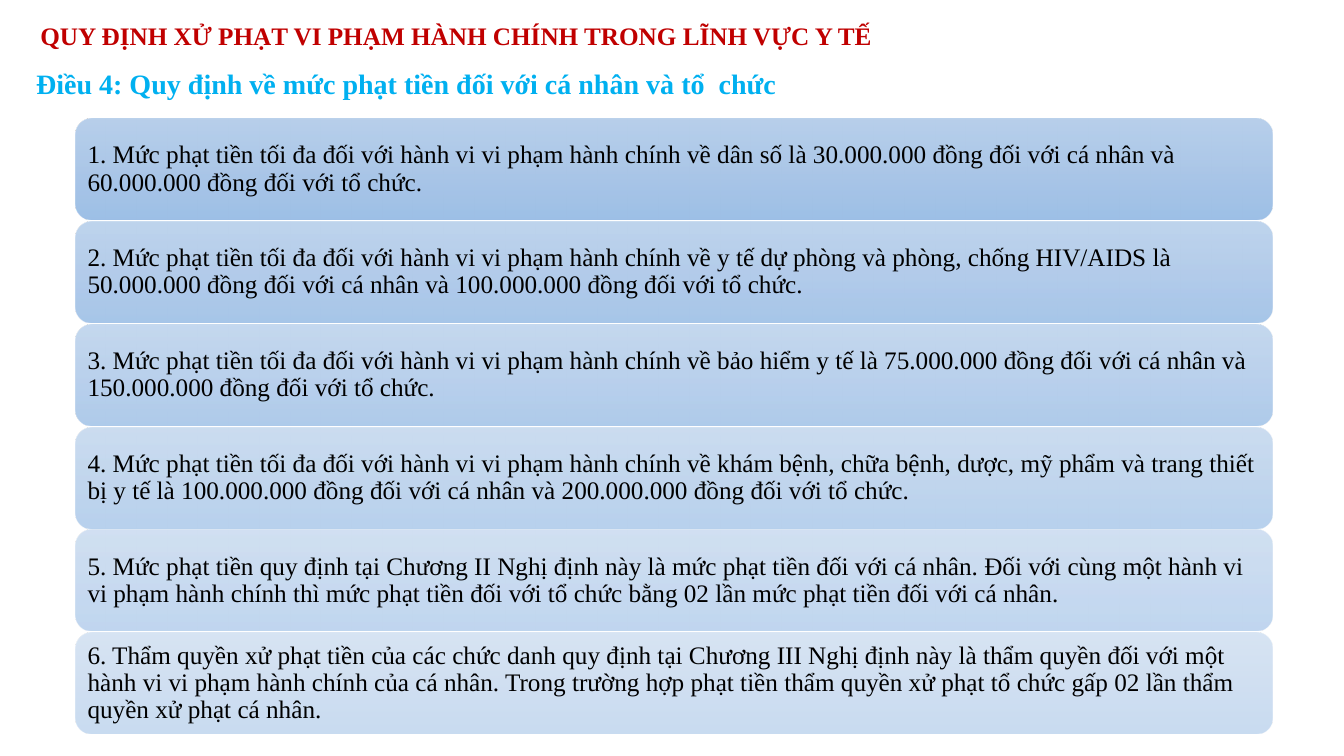
from dataclasses import dataclass

from lxml.etree import SubElement
from pptx import Presentation
from pptx.dml.color import RGBColor
from pptx.enum.shapes import MSO_SHAPE as Preset
from pptx.enum.text import MSO_ANCHOR as Anchor, MSO_AUTO_SIZE as AutoSize, PP_ALIGN as Align
from pptx.oxml.ns import qn
from pptx.util import Inches, Pt


@dataclass(frozen=True)
class Theme:
    font: str = "Times New Roman"
    heading_color: str = "C00000"
    article_color: str = "00B0F0"
    clause_color: str = "000000"
    gradient: tuple = ((0, "B1CBE9"), (50, "A3C1E5"), (100, "93B9E4"))
    heading_size: int = 18
    article_size: int = 20
    clause_size: int = 18


THEME = Theme()

HEADING = "QUY ĐỊNH XỬ PHẠT VI PHẠM HÀNH CHÍNH TRONG LĨNH VỰC Y TẾ"
ARTICLE = "Điều 4: Quy định về mức phạt tiền đối với cá nhân và tổ  chức"
CLAUSES = (
    "1. Mức phạt tiền tối đa đối với hành vi vi phạm hành chính về dân số là "
    "30.000.000 đồng đối với cá nhân và 60.000.000 đồng đối với tổ chức.",
    "2. Mức phạt tiền tối đa đối với hành vi vi phạm hành chính về y tế dự phòng và phòng, "
    "chống HIV/AIDS là 50.000.000 đồng đối với cá nhân và 100.000.000 đồng đối với tổ chức.",
    "3. Mức phạt tiền tối đa đối với hành vi vi phạm hành chính về bảo hiểm y tế là "
    "75.000.000 đồng đối với cá nhân và 150.000.000 đồng đối với tổ chức.",
    "4. Mức phạt tiền tối đa đối với hành vi vi phạm hành chính về khám bệnh, chữa bệnh, dược, "
    "mỹ phẩm và trang thiết bị y tế là 100.000.000 đồng đối với cá nhân và 200.000.000 đồng "
    "đối với tổ chức.",
    "5. Mức phạt tiền quy định tại Chương II Nghị định này là mức phạt tiền đối với cá nhân. "
    "Đối với cùng một hành vi vi phạm hành chính thì mức phạt tiền đối với tổ chức bằng 02 lần "
    "mức phạt tiền đối với cá nhân.",
    "6. Thẩm quyền xử phạt tiền của các chức danh quy định tại Chương III Nghị định này là "
    "thẩm quyền đối với một hành vi vi phạm hành chính của cá nhân. Trong trường hợp phạt tiền "
    "thẩm quyền xử phạt tổ chức gấp 02 lần thẩm quyền xử phạt cá nhân.",
)

# Clause stack, in inches; opacity in percent
CLAUSE_LEFT, CLAUSE_TOP = 0.75, 1.18
CLAUSE_WIDTH, CLAUSE_HEIGHT = 11.87, 1
CLAUSE_PITCH = 1.02
CLAUSE_INSET = 0.07
FIRST_OPACITY, OPACITY_STEP = 90, 8


def apply_format(target, values):
    for name, value in values.items():
        setattr(target, name, value)


def write_text(holder, text, size, color, bold=False, frame_format=None, line_spacing=1.0):
    frame = holder.text_frame
    frame.text = text
    apply_format(frame, {"word_wrap": True, **(frame_format or {})})
    paragraph = frame.paragraphs[0]
    apply_format(paragraph, {"alignment": Align.LEFT, "line_spacing": line_spacing})
    font = paragraph.runs[0].font
    apply_format(font, {"name": THEME.font, "size": Pt(size), "bold": bold})
    font.color.rgb = RGBColor.from_string(color)


def fill_gradient(shape, opacity):
    """Top-to-bottom gradient in the theme colours, at one opacity."""
    shape.fill.gradient()
    shape.fill.gradient_angle = 270
    stops = shape._element.spPr.find(qn("a:gradFill")).find(qn("a:gsLst"))
    stops.clear()
    for position, color in THEME.gradient:
        stop = SubElement(stops, qn("a:gs"), pos=str(position * 1000))
        shade = SubElement(stop, qn("a:srgbClr"), val=color)
        SubElement(shade, qn("a:alpha"), val=str(opacity * 1000))


def add_heading(slide):
    heading = slide.shapes.title
    apply_format(heading, {"left": Inches(0.3), "top": Inches(0.15),
                           "width": Inches(8.86), "height": Inches(0.4)})
    write_text(heading, HEADING, THEME.heading_size, THEME.heading_color, bold=True,
               frame_format={"vertical_anchor": Anchor.TOP,
                             "auto_size": AutoSize.SHAPE_TO_FIT_TEXT})


def add_article(slide):
    article = slide.shapes.add_textbox(Inches(0.26), Inches(0.61), Inches(10.74), Inches(0.44))
    write_text(article, ARTICLE, THEME.article_size, THEME.article_color, bold=True,
               frame_format={"auto_size": AutoSize.SHAPE_TO_FIT_TEXT})


def add_clause(slide, index, text):
    clause = slide.shapes.add_shape(
        Preset.ROUNDED_RECTANGLE, Inches(CLAUSE_LEFT), Inches(CLAUSE_TOP + index * CLAUSE_PITCH),
        Inches(CLAUSE_WIDTH), Inches(CLAUSE_HEIGHT))
    clause.shadow.inherit = False
    clause.line.fill.background()
    fill_gradient(clause, FIRST_OPACITY - index * OPACITY_STEP)
    insets = {f"margin_{side}": Inches(CLAUSE_INSET)
              for side in ("left", "top", "right", "bottom")}
    write_text(clause, text, THEME.clause_size, THEME.clause_color, line_spacing=0.9,
               frame_format={"vertical_anchor": Anchor.MIDDLE, **insets})


def main():
    deck = Presentation()
    apply_format(deck, {"slide_width": Inches(13.33), "slide_height": Inches(7.5)})
    slide = deck.slides.add_slide(deck.slide_layouts.get_by_name("Title Only"))

    # Heading and article name
    add_heading(slide)
    add_article(slide)

    # Clauses, fading downwards
    for index, text in enumerate(CLAUSES):
        add_clause(slide, index, text)

    deck.save("out.pptx")


if __name__ == "__main__":
    main()
